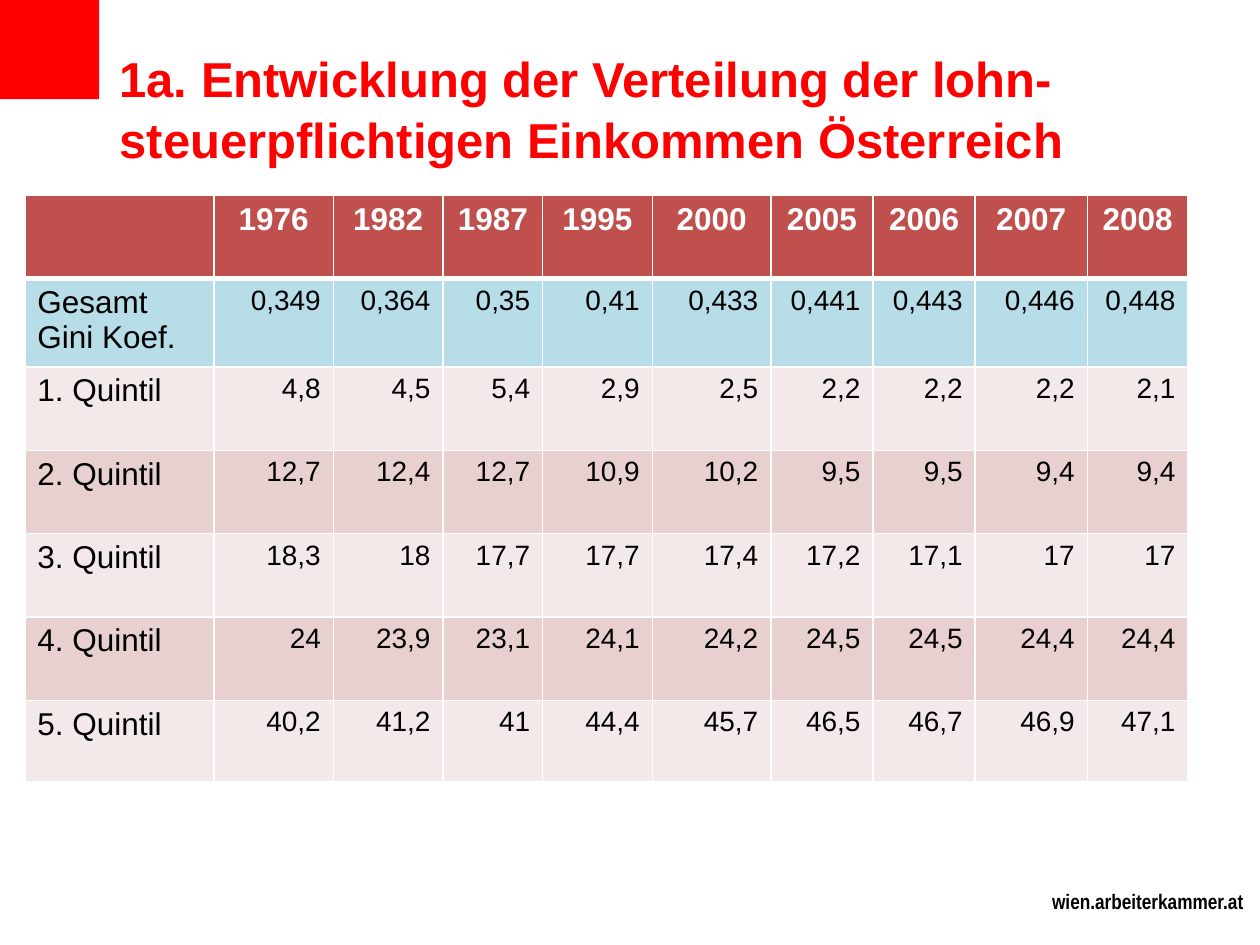
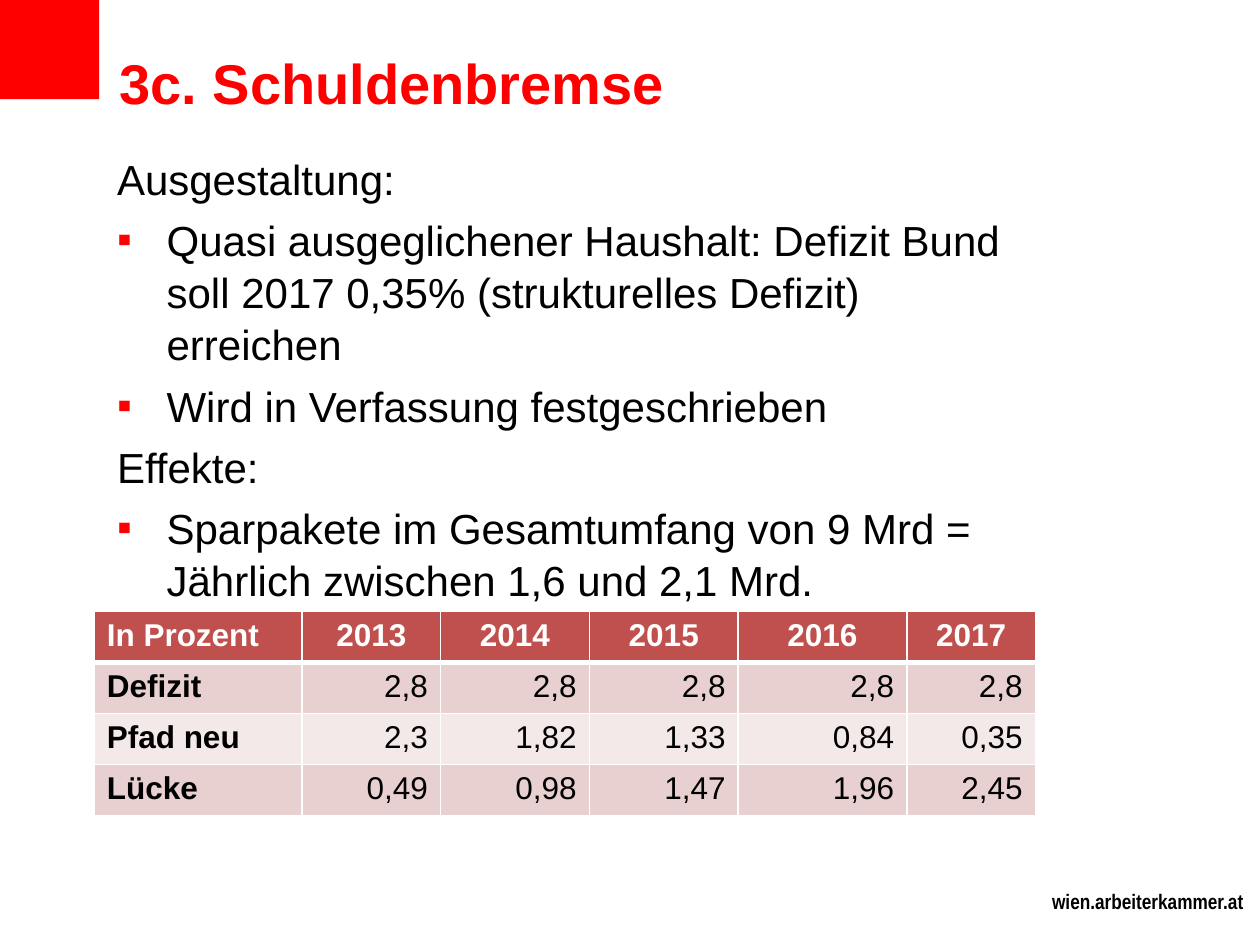
from dataclasses import dataclass

from lxml import etree
from pptx import Presentation
from pptx.dml.color import RGBColor
from pptx.enum.shapes import MSO_SHAPE
from pptx.enum.text import MSO_ANCHOR, PP_ALIGN
from pptx.oxml.ns import qn
from pptx.util import Cm, Pt

RECTANGLE = MSO_SHAPE.RECTANGLE
TOP = MSO_ANCHOR.TOP
LEFT, CENTER, RIGHT = PP_ALIGN.LEFT, PP_ALIGN.CENTER, PP_ALIGN.RIGHT
BLANK_LAYOUT = 6


@dataclass(frozen=True)
class Theme:
    red: str = "FF0000"
    black: str = "000000"
    white: str = "FFFFFF"
    header_fill: str = "C0504D"
    highlight_fill: str = "B7DEE8"
    dark_band: str = "E8D0D0"
    light_band: str = "F4E9E9"
    font: str = "Arial"
    footer_font: str = "Arial Narrow"
    long_title_size: int = 28
    title_size: int = 32
    body_size: int = 24
    table_size: int = 18
    dense_value_size: int = 16
    footer_size: int = 12
    thin_border: float = 1
    header_border: float = 3


@dataclass(frozen=True)
class Box:
    """A region in centimetres."""
    left: float
    top: float
    width: float
    height: float

    def lengths(self):
        return Cm(self.left), Cm(self.top), Cm(self.width), Cm(self.height)


THEME = Theme()
CORNER_BOX = Box(0, 0, 2, 2)
TITLE_BOX = Box(2.11, 0.76, 21.39, 3.18)
BODY_BOX = Box(2.11, 2.92, 19.05, 12.75)
FOOTER_BOX = Box(20.96, 17.78, 4.65, 0.76)
BULLET_INDENT = 1.0

YEARS = ["1976", "1982", "1987", "1995", "2000", "2005", "2006", "2007", "2008"]
INCOME_ROWS = [
    ["", *YEARS],
    ["Gesamt\nGini Koef.", "0,349", "0,364", "0,35", "0,41", "0,433", "0,441", "0,443", "0,446", "0,448"],
    ["1. Quintil", "4,8", "4,5", "5,4", "2,9", "2,5", "2,2", "2,2", "2,2", "2,1"],
    ["2. Quintil", "12,7", "12,4", "12,7", "10,9", "10,2", "9,5", "9,5", "9,4", "9,4"],
    ["3. Quintil", "18,3", "18", "17,7", "17,7", "17,4", "17,2", "17,1", "17", "17"],
    ["4. Quintil", "24", "23,9", "23,1", "24,1", "24,2", "24,5", "24,5", "24,4", "24,4"],
    ["5. Quintil", "40,2", "41,2", "41", "44,4", "45,7", "46,5", "46,7", "46,9", "47,1"],
]
INCOME_COLUMNS = [3.81, 2.41, 2.21, 2.01, 2.21, 2.39, 2.06, 2.06, 2.26, 2.03]
INCOME_HEIGHTS = [1.68, 1.73, 1.68, 1.68, 1.68, 1.68, 1.63]

DEFICIT_ROWS = [
    ["In Prozent", "2013", "2014", "2015", "2016", "2017"],
    ["Defizit", "2,8", "2,8", "2,8", "2,8", "2,8"],
    ["Pfad neu", "2,3", "1,82", "1,33", "0,84", "0,35"],
    ["Lücke", "0,49", "0,98", "1,47", "1,96", "2,45"],
]
DEFICIT_COLUMNS = [4.19, 2.79, 3, 3, 3.4, 2.59]
DEFICIT_HEIGHTS = [1.03] * len(DEFICIT_ROWS)

# Each entry: text, whether it carries a bullet
DEBT_BRAKE_POINTS = [
    ("Ausgestaltung:", False),
    ("Quasi ausgeglichener Haushalt: Defizit Bund soll 2017 0,35% (strukturelles Defizit) erreichen", True),
    ("Wird in Verfassung festgeschrieben", True),
    ("Effekte:", False),
    ("Sparpakete im Gesamtumfang von 9 Mrd = Jährlich zwischen 1,6 und 2,1 Mrd.", True),
]


def format_runs(paragraph, size, color, bold=False, font=THEME.font):
    for run in paragraph.runs:
        run.font.name = font
        run.font.size = Pt(size)
        run.font.bold = bold
        run.font.color.rgb = RGBColor.from_string(color)


def add_text_box(slide, box):
    text_frame = slide.shapes.add_textbox(*box.lengths()).text_frame
    text_frame.word_wrap = True
    text_frame.vertical_anchor = TOP
    return text_frame


def add_corner(slide, box):
    corner = slide.shapes.add_shape(RECTANGLE, *box.lengths())
    corner.shadow.inherit = False
    corner.fill.solid()
    corner.fill.fore_color.rgb = RGBColor.from_string(THEME.red)
    corner.line.fill.background()


def add_footer(slide, box):
    text_frame = add_text_box(slide, box)
    text_frame.text = "wien.arbeiterkammer.at"
    format_runs(text_frame.paragraphs[0], THEME.footer_size, THEME.black, True, THEME.footer_font)


def add_title(slide, box, title, size):
    text_frame = add_text_box(slide, box)
    text_frame.margin_left, text_frame.margin_top = Cm(0.3), Cm(0.15)
    text_frame.text = title
    paragraph = text_frame.paragraphs[0]
    paragraph.line_spacing = 1.05
    format_runs(paragraph, size, THEME.red, bold=True)


def add_bullet(paragraph):
    properties = paragraph._p.get_or_add_pPr()
    properties.set("marL", str(Cm(BULLET_INDENT)))
    properties.set("indent", str(-Cm(BULLET_INDENT)))
    color = etree.SubElement(properties, qn("a:buClr"))
    etree.SubElement(color, qn("a:srgbClr"), val=THEME.red)
    etree.SubElement(properties, qn("a:buFont"), typeface=THEME.font)
    etree.SubElement(properties, qn("a:buChar"), char="▪")


def add_body(slide, box, points):
    text_frame = add_text_box(slide, box)
    text_frame.text = "\n".join(text for text, _ in points)
    for index, (paragraph, (_, bulleted)) in enumerate(zip(text_frame.paragraphs, points)):
        if bulleted:
            add_bullet(paragraph)
        paragraph.line_spacing = 1.04
        paragraph.space_before = Pt(2.5 if index else 0)
        paragraph.space_after = Pt(2.5)
        format_runs(paragraph, THEME.body_size, THEME.black)


def set_borders(cell, top, bottom):
    """Draw white cell borders; top and bottom are widths in points."""
    properties = cell._tc.get_or_add_tcPr()
    thin = THEME.thin_border
    sides = [("a:lnL", thin), ("a:lnR", thin), ("a:lnT", top), ("a:lnB", bottom)]
    for position, (tag, width) in enumerate(sides):
        line = etree.Element(qn(tag), w=str(Pt(width)))
        fill = etree.SubElement(line, qn("a:solidFill"))
        etree.SubElement(fill, qn("a:srgbClr"), val=THEME.white)
        properties.insert(position, line)


def row_fill(row_index, highlighted_row):
    if row_index == 0:
        return THEME.header_fill
    if row_index == highlighted_row:
        return THEME.highlight_fill
    return THEME.dark_band if row_index % 2 else THEME.light_band


def add_data_table(slide, left, top, rows, columns, heights, value_size, bold_labels=False, highlighted_row=None):
    box = Box(left, top, sum(columns), sum(heights))
    table = slide.shapes.add_table(len(rows), len(columns), *box.lengths()).table
    for column, width in zip(table.columns, columns):
        column.width = Cm(width)
    for row, height in zip(table.rows, heights):
        row.height = Cm(height)

    for row_index, values in enumerate(rows):
        is_header = row_index == 0
        for column_index, value in enumerate(values):
            is_label = column_index == 0
            cell = table.cell(row_index, column_index)
            cell.fill.solid()
            cell.fill.fore_color.rgb = RGBColor.from_string(row_fill(row_index, highlighted_row))
            set_borders(
                cell,
                top=THEME.header_border if row_index == 1 else THEME.thin_border,
                bottom=THEME.header_border if is_header else THEME.thin_border,
            )
            cell.text_frame.text = value
            for paragraph in cell.text_frame.paragraphs:
                paragraph.alignment = LEFT if is_label else CENTER if is_header else RIGHT
                format_runs(
                    paragraph,
                    THEME.table_size if is_header or is_label else value_size,
                    THEME.white if is_header else THEME.black,
                    bold=is_header or (is_label and bold_labels),
                )


def add_framed_slide(presentation, title, title_size):
    """Add a slide with the shared corner, footer and title."""
    slide = presentation.slides.add_slide(presentation.slide_layouts[BLANK_LAYOUT])
    add_corner(slide, CORNER_BOX)
    add_footer(slide, FOOTER_BOX)
    add_title(slide, TITLE_BOX, title, title_size)
    return slide


def add_income_slide(presentation):
    slide = add_framed_slide(
        presentation,
        "1a. Entwicklung der Verteilung der lohn-steuerpflichtigen Einkommen Österreich",
        THEME.long_title_size,
    )
    add_data_table(slide, 0.5, 3.94, INCOME_ROWS, INCOME_COLUMNS, INCOME_HEIGHTS,
                   THEME.dense_value_size, highlighted_row=1)


def add_debt_brake_slide(presentation):
    slide = add_framed_slide(presentation, "3c. Schuldenbremse", THEME.title_size)
    add_body(slide, BODY_BOX, DEBT_BRAKE_POINTS)
    add_data_table(slide, 1.9, 12.32, DEFICIT_ROWS, DEFICIT_COLUMNS, DEFICIT_HEIGHTS,
                   THEME.table_size, bold_labels=True)


def main():
    presentation = Presentation()
    presentation.slide_width, presentation.slide_height = Cm(25.4), Cm(19.05)
    add_income_slide(presentation)
    add_debt_brake_slide(presentation)
    presentation.save("out.pptx")


if __name__ == "__main__":
    main()
